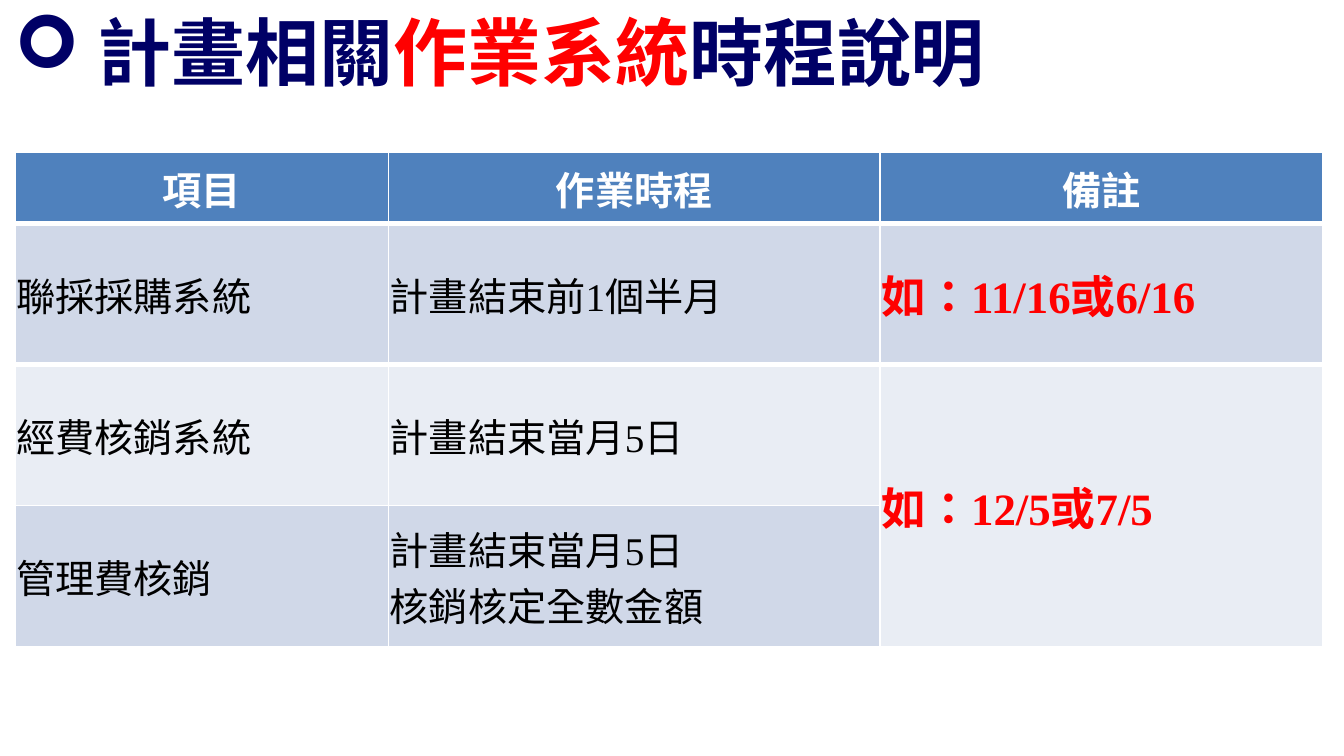
from lxml.etree import SubElement
from pptx import Presentation
from pptx.dml.color import RGBColor
from pptx.enum.lang import MSO_LANGUAGE_ID
from pptx.enum.text import MSO_ANCHOR, PP_ALIGN
from pptx.oxml.ns import qn
from pptx.util import Inches, Pt

FONT = "Times New Roman"
NAVY, RED, WHITE, BLACK = "000066", "FF0000", "FFFFFF", "000000"
HEADER_FILL, BANDS = "4F81BD", ("D0D8E8", "E9EDF4")

HEADING = [("計畫相關", NAVY), ("作業系統", RED), ("時程說明", NAVY)]
SCHEDULE = [
    ("項目", "作業時程", "備註"),
    ("聯採採購系統", "計畫結束前1個半月", "如：11/16或6/16"),
    ("經費核銷系統", "計畫結束當月5日", "如：12/5或7/5"),
    ("管理費核銷", "計畫結束當月5日\n核銷核定全數金額", ""),
]
COLUMN_WIDTHS = (2.78, 3.66, 3.29)
ROW_HEIGHTS = (0.53, 1.05, 1.05, 1.05)
REMARK_COLUMN = 2


def rgb(value):
    return RGBColor.from_string(value)


def style_font(font, size, color, bold):
    font.name, font.size, font.bold = FONT, Pt(size), bold
    font.color.rgb = rgb(color)
    font.language_id = MSO_LANGUAGE_ID.TRADITIONAL_CHINESE


def add_border(cell, side, width):
    properties = cell._tc.get_or_add_tcPr()
    line = SubElement(properties, qn(f"a:{side}"), w=str(Pt(width)))
    SubElement(SubElement(line, qn("a:solidFill")), qn("a:srgbClr"), val=WHITE)
    properties.insert(0, line)


def fill_cell(cell, text, row, column):
    header, remark = row == 0, column == REMARK_COLUMN
    cell.fill.solid()
    cell.fill.fore_color.rgb = rgb(HEADER_FILL if header else BANDS[(row - 1) % 2])
    cell.vertical_anchor = MSO_ANCHOR.MIDDLE
    cell.margin_left = cell.margin_top = cell.margin_right = Inches(0.01)
    cell.margin_bottom = 0
    cell.text_frame.text = text
    for paragraph in cell.text_frame.paragraphs:
        paragraph.alignment = PP_ALIGN.CENTER if header else PP_ALIGN.LEFT
        if header:
            style_font(paragraph.font, 21, WHITE, True)
        elif remark:
            style_font(paragraph.font, 24, RED, True)
        else:
            style_font(paragraph.font, 21, BLACK, False)


# Widescreen slide, 16:9
prs = Presentation()
prs.slide_width, prs.slide_height = Inches(10), Inches(10 * 9 / 16)
slide = prs.slides.add_slide(prs.slide_layouts[6])

# Heading with an arrow bullet
heading = slide.shapes.add_textbox(
    Inches(0.01), Inches(0.01), Inches(9.63), Inches(0.74)).text_frame
heading.word_wrap = True
heading.vertical_anchor = MSO_ANCHOR.MIDDLE
heading_line = heading.paragraphs[0]
for text, color in HEADING:
    run = heading_line.add_run()
    run.text = text
    style_font(run.font, 39.6, color, True)
properties = heading_line._p.get_or_add_pPr()
properties.set("marL", str(Inches(0.62)))
properties.set("indent", str(-Inches(0.62)))
SubElement(properties, qn("a:buFont"), typeface="Wingdings")
SubElement(properties, qn("a:buChar"), char="➢")

# Schedule table; its default style draws the thin white borders
schedule = slide.shapes.add_table(
    len(SCHEDULE), len(COLUMN_WIDTHS), Inches(0.11), Inches(1.13),
    Inches(sum(COLUMN_WIDTHS)), Inches(sum(ROW_HEIGHTS))).table
for column, width in zip(schedule.columns, COLUMN_WIDTHS):
    column.width = Inches(width)
for row, height in zip(schedule.rows, ROW_HEIGHTS):
    row.height = Inches(height)
for r, texts in enumerate(SCHEDULE):
    for c, text in enumerate(texts):
        fill_cell(schedule.cell(r, c), text, r, c)
schedule.cell(2, REMARK_COLUMN).merge(schedule.cell(3, REMARK_COLUMN))

# Thick rule under the header row
for c in range(len(COLUMN_WIDTHS)):
    add_border(schedule.cell(0, c), "lnB", 3)
    add_border(schedule.cell(1, c), "lnT", 3)

prs.save("out.pptx")
